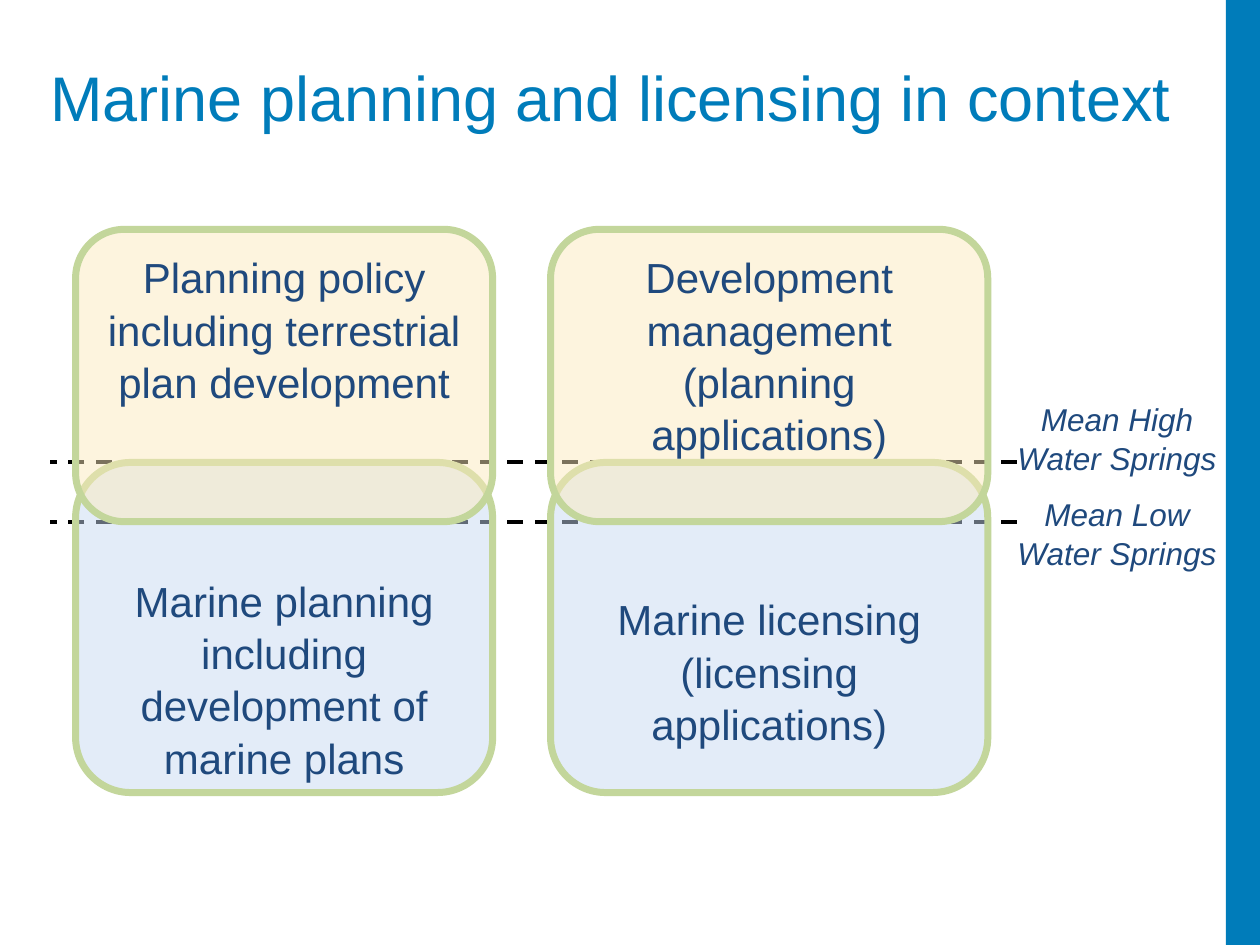
from lxml import etree
from pptx import Presentation
from pptx.dml.color import RGBColor
from pptx.enum.dml import MSO_LINE
from pptx.enum.shapes import MSO_CONNECTOR, MSO_SHAPE
from pptx.enum.text import MSO_ANCHOR, MSO_AUTO_SIZE, PP_ALIGN
from pptx.oxml.ns import qn
from pptx.util import Inches, Pt

ROUNDED, RECTANGLE = MSO_SHAPE.ROUNDED_RECTANGLE, MSO_SHAPE.RECTANGLE
TOP, MIDDLE = MSO_ANCHOR.TOP, MSO_ANCHOR.MIDDLE
LEFT, CENTER = PP_ALIGN.LEFT, PP_ALIGN.CENTER

BRAND_BLUE = RGBColor(0x00, 0x7C, 0xBA)
NAVY = RGBColor(0x1F, 0x49, 0x7D)
SEA = RGBColor(0xC6, 0xD9, 0xF1)
LAND = RGBColor(0xFC, 0xEA, 0xBC)
GREEN = RGBColor(0xC3, 0xD6, 0x9B)
BLACK = RGBColor(0, 0, 0)

# Content
TITLE = "Marine planning and licensing in context"
# left, width, land text, sea text, space above the sea text
COLUMNS = [
    (0.6, 3.31, "Planning policy including terrestrial plan development",
     "Marine planning including development of marine plans", 0.75),
    (4.37, 3.47, "Development management (planning applications)",
     "Marine licensing (licensing applications)", 0.9),
]
HIGH_WATER, LOW_WATER = 3.67, 4.14
# label, top of label
WATER_LABELS = [("Mean High Water Springs", 3.2),
                ("Mean Low Water Springs", 3.95)]

# Land reaches down to low water, sea reaches up to high water
LAND_TOP, SEA_BOTTOM = 1.82, 6.29
TIDE_LEFT, TIDE_RIGHT = 0.4, 8.07


def write(shape, text, size=24, color=NAVY, align=CENTER, anchor=TOP,
          italic=False, top_inset=0.05, side_inset=0.1):
    frame = shape.text_frame
    frame.word_wrap = True
    frame.auto_size = MSO_AUTO_SIZE.NONE
    frame.vertical_anchor = anchor
    frame.margin_top = Inches(top_inset)
    frame.margin_left = frame.margin_right = Inches(side_inset)
    frame.text = text
    paragraph = frame.paragraphs[0]
    paragraph.alignment = align
    paragraph.line_spacing = 1.04
    font = paragraph.runs[0].font
    font.name, font.size, font.italic = "Arial", Pt(size), italic
    font.color.rgb = color


def add_block(preset, left, top, width, height, fill=None, outline=None,
              opacity=100):
    block = slide.shapes.add_shape(preset, Inches(left), Inches(top),
                                   Inches(width), Inches(height))
    block.shadow.inherit = False
    if fill is None:
        block.fill.background()
    else:
        block.fill.solid()
        block.fill.fore_color.rgb = fill
        if opacity < 100:
            color = block.fill._xPr.find(".//" + qn("a:srgbClr"))
            etree.SubElement(color, qn("a:alpha")).set("val", str(opacity * 1000))
    if outline is None:
        block.line.fill.background()
    else:
        block.line.color.rgb = outline
        block.line.width = Pt(4)
    return block


prs = Presentation()
prs.slide_width, prs.slide_height = Inches(10), Inches(7.5)
slide = prs.slides.add_slide(prs.slide_layouts[5])

# Title and side bar
title = slide.shapes.title
title.left, title.top = Inches(0.4), Inches(0.44)
title.width, title.height = Inches(9.18), Inches(0.63)
write(title, TITLE, size=36, color=BRAND_BLUE, align=LEFT, anchor=MIDDLE,
      top_inset=0, side_inset=0)
title.text_frame.margin_bottom = 0
add_block(RECTANGLE, 9.73, 0, 0.27, 7.5, fill=BRAND_BLUE)

# Tide lines, behind the blocks
for level in (LOW_WATER, HIGH_WATER):
    tide = slide.shapes.add_connector(
        MSO_CONNECTOR.STRAIGHT, Inches(TIDE_RIGHT), Inches(level),
        Inches(TIDE_LEFT), Inches(level))
    tide.line.color.rgb = BLACK
    tide.line.width = Pt(2.25)
    tide.line.dash_style = MSO_LINE.DASH
    etree.SubElement(tide._element.spPr, qn("a:effectLst"))

# Overlapping sea and land blocks
for left, width, land_text, sea_text, sea_inset in COLUMNS:
    sea = add_block(ROUNDED, left, HIGH_WATER, width, SEA_BOTTOM - HIGH_WATER,
                    fill=SEA, outline=GREEN, opacity=49)
    write(sea, sea_text, top_inset=sea_inset)
    land = add_block(ROUNDED, left, LAND_TOP, width, LOW_WATER - LAND_TOP,
                     fill=LAND, outline=GREEN, opacity=49)
    write(land, land_text)

# Tide labels
for label, top in WATER_LABELS:
    write(add_block(ROUNDED, 7.92, top, 1.89, 0.55), label, size=18,
          anchor=MIDDLE, italic=True)

prs.save("out.pptx")
